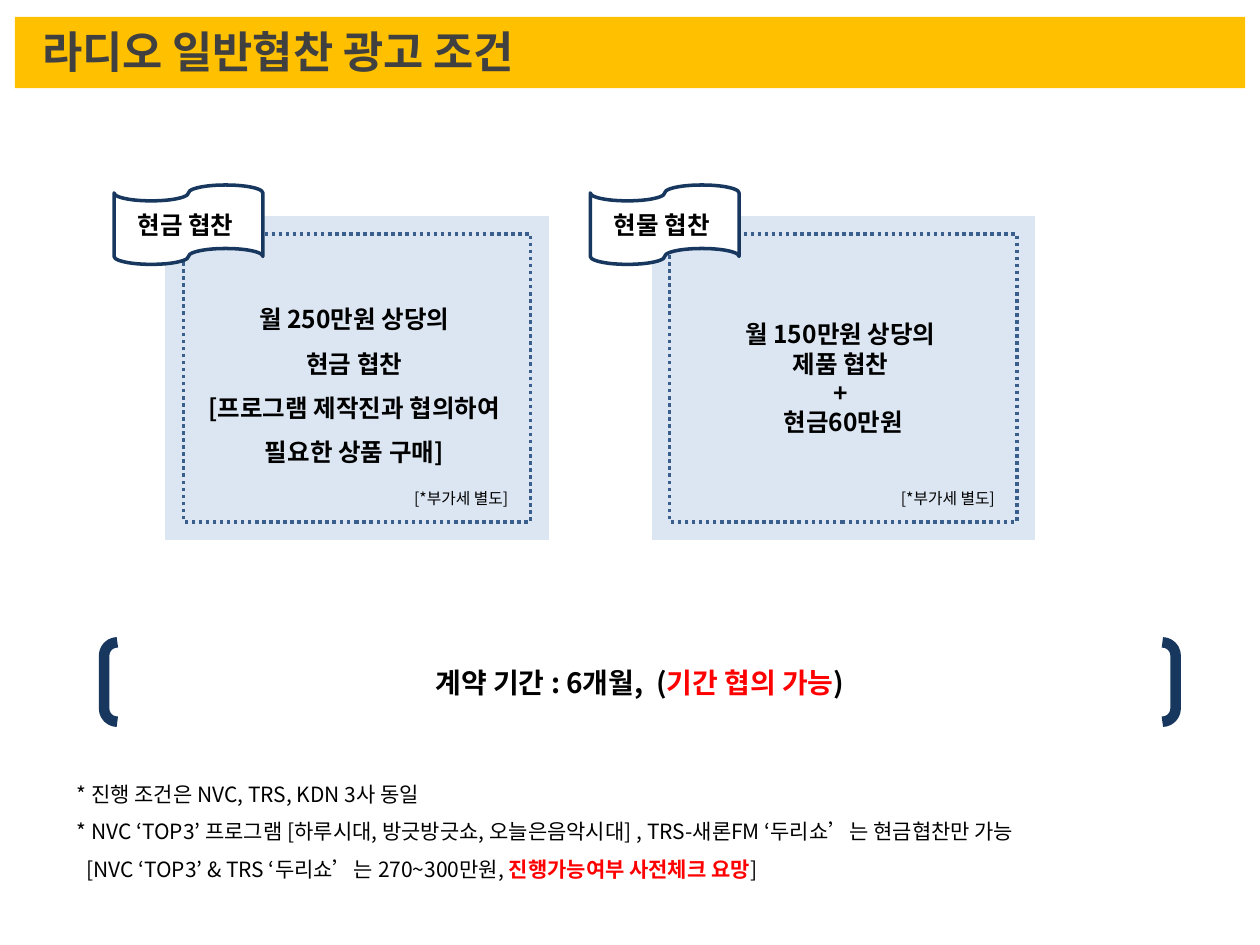
"""Build the slide on the terms of radio sponsorship adverts."""
from pptx import Presentation
from pptx import util as u
from pptx.dml.color import RGBColor
from pptx.enum import dml, shapes, text
from lxml import etree

FONT = "Noto Sans CJK KR"
NS = "{http://schemas.openxmlformats.org/drawingml/2006/main}"
GOLD = RGBColor(0xFF, 0xC0, 0x00)
GREY = RGBColor(0x40, 0x40, 0x40)
PALE = RGBColor(0xDC, 0xE6, 0xF2)
BLUE = RGBColor(0x3A, 0x5F, 0x8C)
NAVY = RGBColor(0x17, 0x37, 0x5E)
RED = RGBColor(0xFF, 0x00, 0x00)
BLACK = RGBColor(0x00, 0x00, 0x00)
WHITE = RGBColor(0xFF, 0xFF, 0xFF)
KIND = shapes.MSO_SHAPE
MID = text.PP_ALIGN.CENTER
LEFT = text.PP_ALIGN.LEFT


def draw(kind, x, y, w, h, fill=None, line=None, width=2):
    shape = slide.shapes.add_shape(kind, u.Cm(x), u.Cm(y), u.Cm(w), u.Cm(h))
    shape.shadow.inherit = False
    for part, hue in ((shape.fill, fill), (shape.line.fill, line)):
        if hue is None:
            part.background()
        else:
            part.solid()
            part.fore_color.rgb = hue
    if line is not None:
        shape.line.width = u.Pt(width)
    return shape


def write(shape, lines, size, bold=False, align=MID, space=None, hue=BLACK):
    frame = shape.text_frame
    frame.word_wrap = True
    if align == LEFT:
        frame.auto_size = text.MSO_AUTO_SIZE.SHAPE_TO_FIT_TEXT
    else:
        frame.vertical_anchor = text.MSO_ANCHOR.MIDDLE
    for i, line in enumerate(lines):
        para = frame.paragraphs[0] if i == 0 else frame.add_paragraph()
        para.alignment = align
        if space:
            para.line_spacing = space
        for words, tint in line:
            run = para.add_run()
            run.text = words
            font = run.font
            font.name = FONT
            font.size = u.Pt(size)
            font.bold = bold or tint == RED
            font.color.rgb = tint or hue
            etree.SubElement(font._element, NS + "ea", typeface=FONT)


deck = Presentation()
deck.slide_width, deck.slide_height = u.Cm(25.4), u.Cm(19.05)
slide = deck.slides.add_slide(deck.slide_layouts[6])

draw(KIND.RECTANGLE, 0.3, 0.34, 24.8, 1.44, GOLD)
title = slide.shapes.add_textbox(u.Cm(0.4), u.Cm(0.38), u.Cm(20.2), u.Cm(1.32))
write(title, [[(" 라디오 일반협찬 광고 조건", None)]], 25, True, LEFT, hue=GREY)

cards = [
    (3.3, 2.3, 8.1, "현금 협찬 ", 1.5,
     ["월 250만원 상당의 ", "현금 협찬 ", "[프로그램 제작진과 협의하여 ", "필요한 상품 구매] "]),
    (13.1, 11.9, 17.91, "현물 협찬 ", None,
     ["월 150만원 상당의 ", "제품 협찬 ", "+ ", "현금60만원"]),
]
for left, flag, tax, name, space, terms in cards:
    card = draw(KIND.RECTANGLE, left, 4.32, 7.8, 6.6, PALE, WHITE)
    write(card, [[(term, None)] for term in terms], 14, True, space=space)
    frame = draw(KIND.RECTANGLE, left + 0.4, 4.72, 7, 5.8, line=BLUE)
    frame.line.dash_style = dml.MSO_LINE.ROUND_DOT
    tape = draw(KIND.FLOWCHART_PUNCHED_TAPE, flag, 3.73, 3, 1.6, WHITE, NAVY)
    write(tape, [[(name, None)]], 14, True)
    note = slide.shapes.add_textbox(u.Cm(tax), u.Cm(9.73), u.Cm(3), u.Cm(0.64))
    write(note, [[("[*부가세 별도]", None)]], 9, align=LEFT)

span = draw(KIND.DOUBLE_BRACKET, 2.1, 12.95, 21.6, 1.6, line=NAVY, width=6)
write(span, [[("계약 기간 : 6개월,  (", None), ("기간 협의 가능", RED), (")", None)]], 16, True)

rules = [
    [("* 진행 조건은 NVC, TRS, KDN 3사 동일", None)],
    [("* NVC ‘TOP3’ 프로그램 [하루시대, 방긋방긋쇼, 오늘은음악시대] , "
      "TRS-새론FM ‘두리쇼’는 현금협찬만 가능", None)],
    [("[NVC ‘TOP3’ & TRS ‘두리쇼’는 270~300만원, ", None),
     ("진행가능여부 사전체크 요망", RED), ("]", None)],
]
foot = slide.shapes.add_textbox(u.Cm(1.3), u.Cm(15.37), u.Cm(23.4), u.Cm(2.57))
write(foot, rules, 12, align=LEFT, space=1.5)
last = foot.text_frame.paragraphs[-1]
last._p.get_or_add_pPr().set("marL", str(u.Cm(0.19)))

deck.save("out.pptx")
